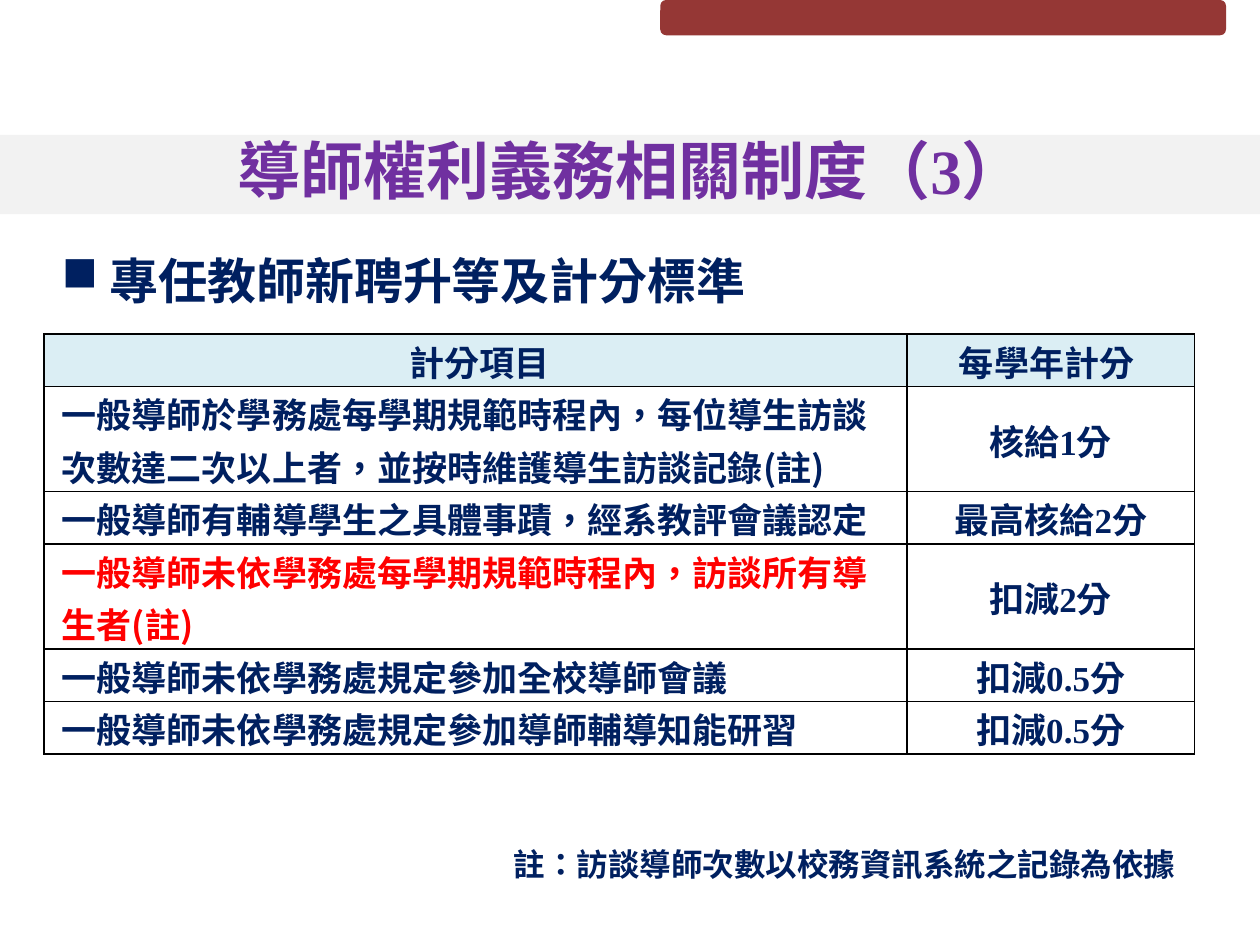
from dataclasses import dataclass

from lxml.etree import SubElement
from pptx import Presentation
from pptx.dml.color import RGBColor
from pptx.enum.shapes import MSO_SHAPE
from pptx.enum.text import MSO_ANCHOR, MSO_AUTO_SIZE, PP_ALIGN
from pptx.oxml.ns import qn
from pptx.util import Inches, Pt


@dataclass(frozen=True)
class Theme:
    """Colours, fonts and type sizes of the slide."""
    navy: str = "002060"
    purple: str = "7030A0"
    red: str = "FF0000"
    band: str = "F2F2F2"
    tab: str = "953735"
    header: str = "DBEEF4"
    white: str = "FFFFFF"
    black: str = "000000"
    sans: str = "Noto Sans CJK SC"
    serif: str = "Times New Roman"
    title: int = 36
    heading: int = 28
    body: int = 20
    note: int = 18
    leading: int = 30


THEME = Theme()

SCORES = [
    ("一般導師於學務處每學期規範時程內，每位導生訪談次數達二次以上者，並按時維護導生訪談記錄(註)", "核給1分", 2, THEME.navy),
    ("一般導師有輔導學生之具體事蹟，經系教評會議認定", "最高核給2分", 1, THEME.navy),
    ("一般導師未依學務處每學期規範時程內，訪談所有導生者(註)", "扣減2分", 2, THEME.red),
    ("一般導師未依學務處規定參加全校導師會議", "扣減0.5分", 1, THEME.navy),
    ("一般導師未依學務處規定參加導師輔導知能研習", "扣減0.5分", 1, THEME.navy),
]


def write(frame, text, size, color=THEME.navy, font=THEME.sans, align=PP_ALIGN.LEFT):
    """Put one bold line of text in a frame and return its paragraph."""
    frame.text = text
    para = frame.paragraphs[0]
    para.alignment = align
    span = para.runs[0]
    span.font.size = Pt(size)
    span.font.bold = True
    span.font.name = font
    span.font.color.rgb = RGBColor.from_string(color)
    properties = span.font._element
    properties.set("lang", "zh-TW")
    SubElement(properties, qn("a:ea")).set("typeface", THEME.sans)
    return para


def add_block(page, kind, box, color):
    """Add a plain filled shape."""
    block = page.shapes.add_shape(kind, *map(Inches, box))
    block.shadow.inherit = False
    block.fill.solid()
    block.fill.fore_color.rgb = RGBColor.from_string(color)
    block.line.fill.background()


def add_title(page, box):
    """Add the centred title in the given box."""
    frame = page.shapes.add_textbox(*map(Inches, box)).text_frame
    frame.word_wrap = True
    frame.vertical_anchor = MSO_ANCHOR.MIDDLE
    write(frame, "導師權利義務相關制度（3）", THEME.title, THEME.purple, THEME.serif, PP_ALIGN.CENTER)


def add_heading(page, box):
    """Add the heading with a square bullet and a hanging indent."""
    frame = page.shapes.add_textbox(*map(Inches, box)).text_frame
    frame.word_wrap = False
    frame.auto_size = MSO_AUTO_SIZE.SHAPE_TO_FIT_TEXT
    para = write(frame, "專任教師新聘升等及計分標準", THEME.heading,
                 font=THEME.serif, align=PP_ALIGN.JUSTIFY)
    properties = para._p.get_or_add_pPr()
    indent = Inches(0.38)
    properties.set("marL", str(indent))
    properties.set("indent", str(-indent))
    SubElement(properties, qn("a:buChar")).set("char", "■")


def add_note(page, box):
    """Add the note below the table."""
    frame = page.shapes.add_textbox(*map(Inches, box)).text_frame
    frame.word_wrap = True
    frame.auto_size = MSO_AUTO_SIZE.SHAPE_TO_FIT_TEXT
    write(frame, "註：訪談導師次數以校務資訊系統之記錄為依據", THEME.note)


def add_borders(cell):
    """Draw a thin line on all four sides of a cell."""
    properties = cell._tc.get_or_add_tcPr()
    for position, side in enumerate(("lnL", "lnR", "lnT", "lnB")):
        line = properties.makeelement(qn(f"a:{side}"), {"w": str(Pt(1))})
        fill = SubElement(line, qn("a:solidFill"))
        SubElement(fill, qn("a:srgbClr")).set("val", THEME.black)
        properties.insert(position, line)


def fill_cell(cell, text, fill, color=THEME.navy, font=THEME.sans, indent=None):
    """Write and style a cell, centred unless an indent is given."""
    cell.margin_left = cell.margin_right = Inches(0.06)
    cell.margin_top = cell.margin_bottom = 0
    cell.vertical_anchor = MSO_ANCHOR.MIDDLE if indent is None else MSO_ANCHOR.TOP
    cell.fill.solid()
    cell.fill.fore_color.rgb = RGBColor.from_string(fill)
    align = PP_ALIGN.CENTER if indent is None else PP_ALIGN.LEFT
    para = write(cell.text_frame, text, THEME.body, color, font, align)
    para.line_spacing = Pt(THEME.leading)
    if indent is not None:
        para._p.get_or_add_pPr().set("marL", str(Inches(indent)))
    add_borders(cell)


def add_score_table(page, box):
    """Add the table of scoring items and their yearly points."""
    left, top, width, height = map(Inches, box)
    table = page.shapes.add_table(len(SCORES) + 1, 2, left, top, width, height).table
    table.horz_banding = False
    table.columns[0].width = int(width * 0.75)
    table.columns[1].width = width - table.columns[0].width
    line_height = height // (1 + sum(lines for _, _, lines, _ in SCORES))
    table.rows[0].height = line_height
    fill_cell(table.cell(0, 0), " 計分項目", THEME.header)
    fill_cell(table.cell(0, 1), "每學年計分 ", THEME.header)
    for row, (item, points, lines, color) in enumerate(SCORES, start=1):
        table.rows[row].height = line_height * lines
        fill_cell(table.cell(row, 0), item, THEME.white, color, indent=0.08)
        fill_cell(table.cell(row, 1), points, THEME.white, font=THEME.serif)


def main():
    """Build and save the slide."""
    deck = Presentation()
    deck.slide_width, deck.slide_height = Inches(10), Inches(7.5)
    page = deck.slides.add_slide(deck.slide_layouts[6])
    add_block(page, MSO_SHAPE.RECTANGLE, (0, 1.07, 10, 0.63), THEME.band)
    add_block(page, MSO_SHAPE.ROUNDED_RECTANGLE, (5.24, 0, 4.49, 0.28), THEME.tab)
    add_title(page, (0.51, 0.99, 9, 0.71))
    add_note(page, (3.98, 6.66, 6.61, 0.4))
    add_score_table(page, (0.35, 2.65, 9.13, 3.3))
    add_heading(page, (0.39, 1.94, 5.69, 0.57))
    deck.save("out.pptx")


if __name__ == "__main__":
    main()
